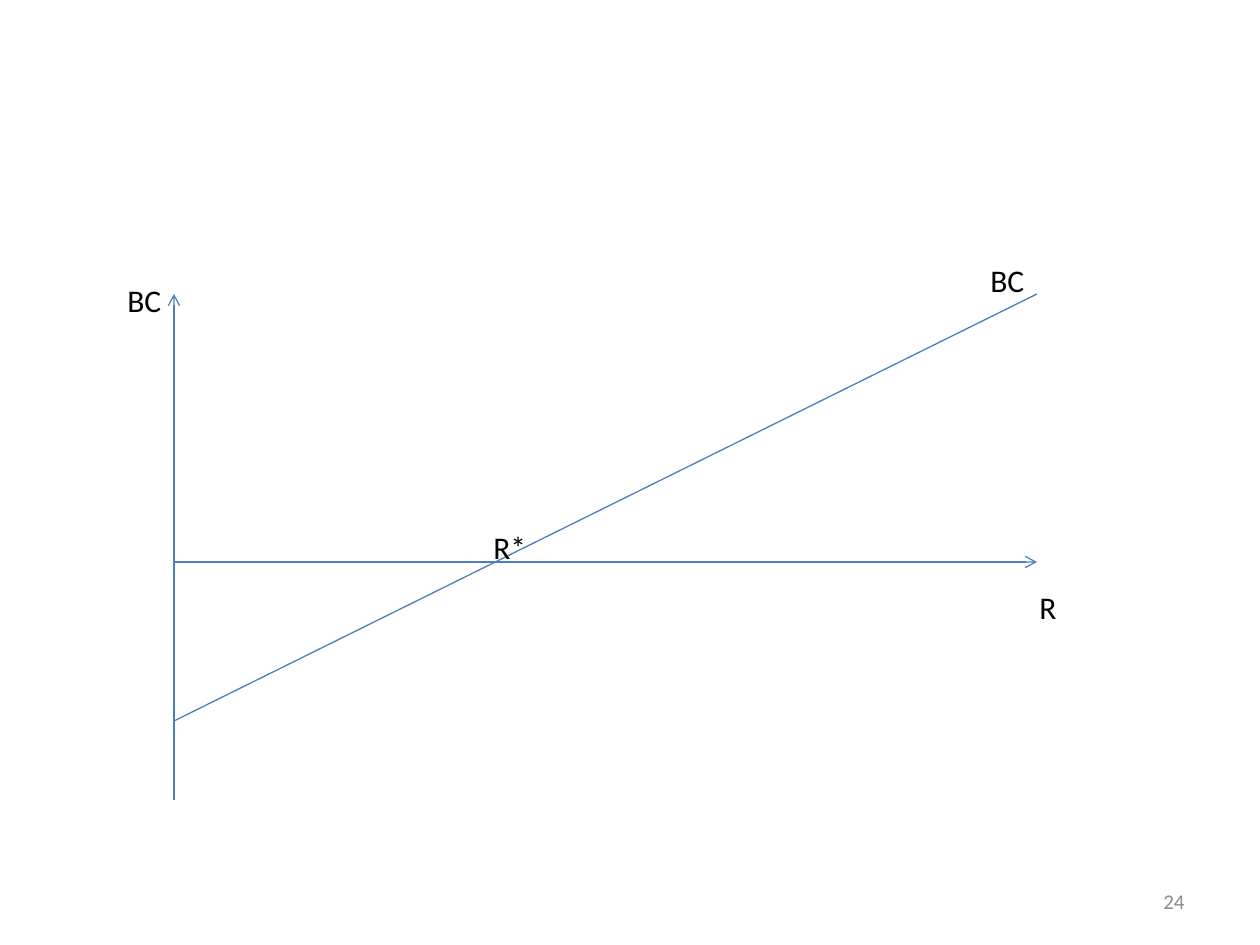
from lxml.etree import SubElement as Sub
from pptx import Presentation
from pptx.dml.color import RGBColor as RGB
from pptx.enum.shapes import MSO_CONNECTOR as Conn
from pptx.enum.text import MSO_ANCHOR as Anchor, MSO_AUTO_SIZE as Fit, PP_ALIGN as Align
from pptx.oxml.ns import qn
from pptx.util import Emu, Pt

HUES = {"line": "4B7EBC", "text": "000000", "page": "8C8C8C"}


def px(n):
    return Emu(round(n * 914400 / 126))


def label(x, y, w, text, size=18, hue="text"):
    box = slide.shapes.add_textbox(px(x), px(y), px(w), px(50))
    frame = box.text_frame
    frame.word_wrap = True
    run = frame.paragraphs[0].add_run()
    run.text = text
    run.font.name = "Calibri"
    run.font.size = Pt(size)
    run.font.color.rgb = RGB.from_string(HUES[hue])
    return frame


deck = Presentation()
deck.slide_width, deck.slide_height = px(1260), px(945)
slide = deck.slides.add_slide(deck.slide_layouts[6])

# Axes with arrowheads, then the BC line
left, right, top = 174, 1037, 294
for x1, y1, x2, y2, arrow in [
    (left, 562, right, 562, True),
    (left, 800, left, top, True),
    (left, 721, right, top, False),
]:
    line = slide.shapes.add_connector(Conn.STRAIGHT, px(x1), px(y1), px(x2), px(y2))
    line.line.color.rgb = RGB.from_string(HUES["line"])
    line.line.width = Pt(0.75)
    if arrow:
        Sub(line.line._get_or_add_ln(), qn("a:tailEnd"), type="arrow")
    Sub(line._element.spPr, qn("a:effectLst"))

# Labels
for x, y, w, text in [
    (1027, 582, 43, "R"),
    (115, 275, 89, "BC"),
    (978, 255, 79, "BC"),
    (481, 522, 98, "R*"),
]:
    frame = label(x, y, w, text)
    frame.auto_size = Fit.SHAPE_TO_FIT_TEXT
    frame.word_wrap = text != "R"

# Page number
page = label(903, 876, 294, "24", 12, "page")
page.vertical_anchor = Anchor.MIDDLE
page.paragraphs[0].alignment = Align.RIGHT

deck.save("out.pptx")
